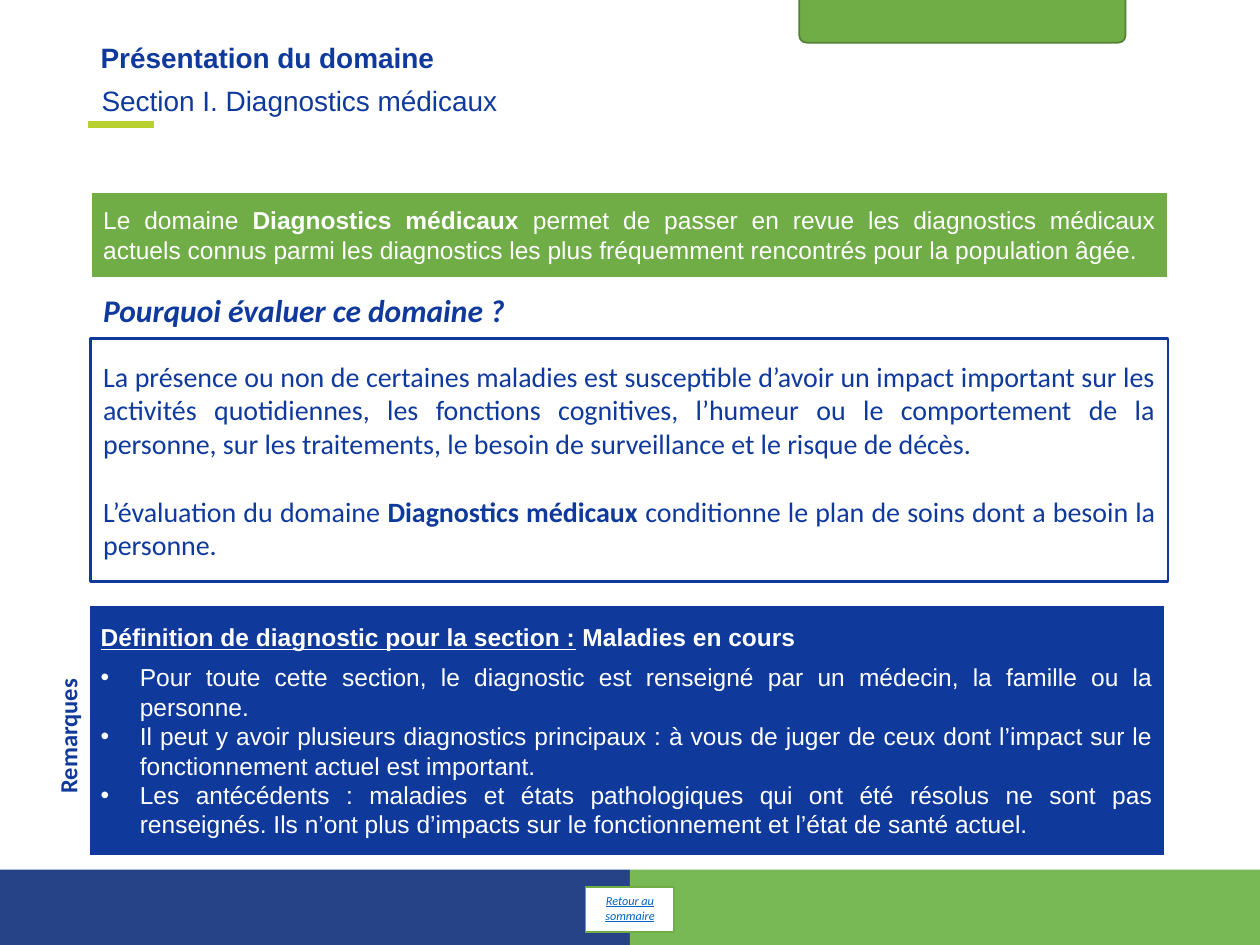
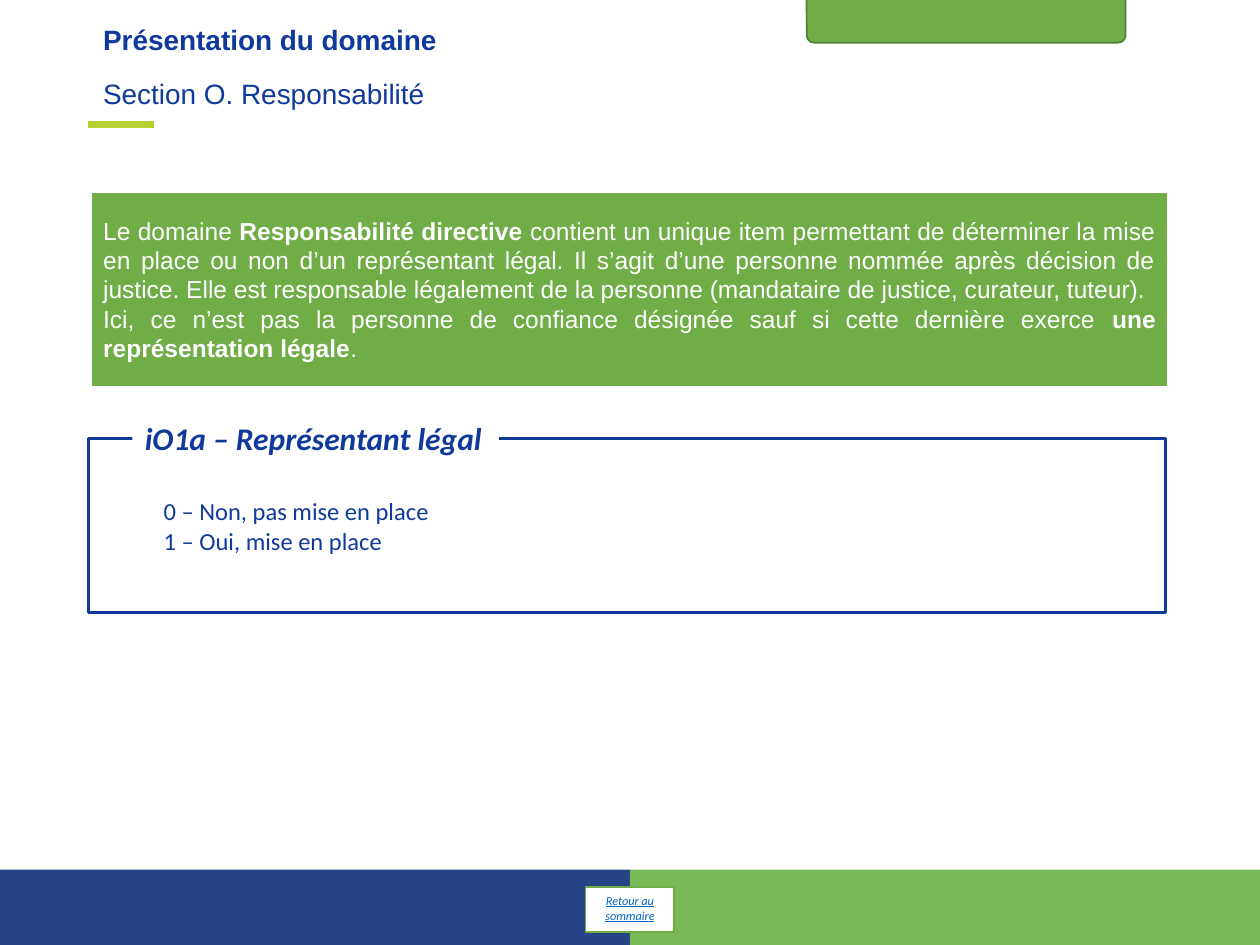
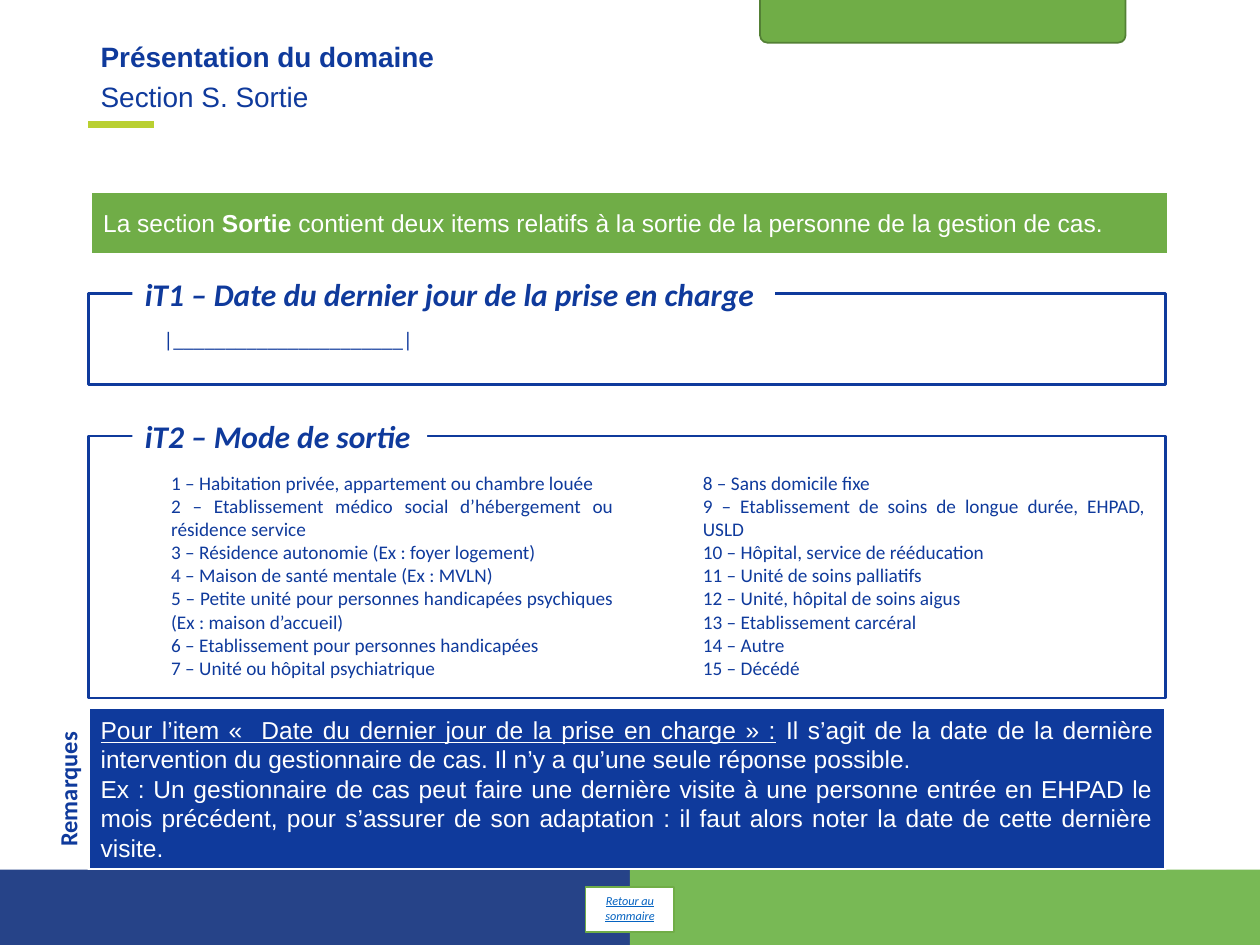
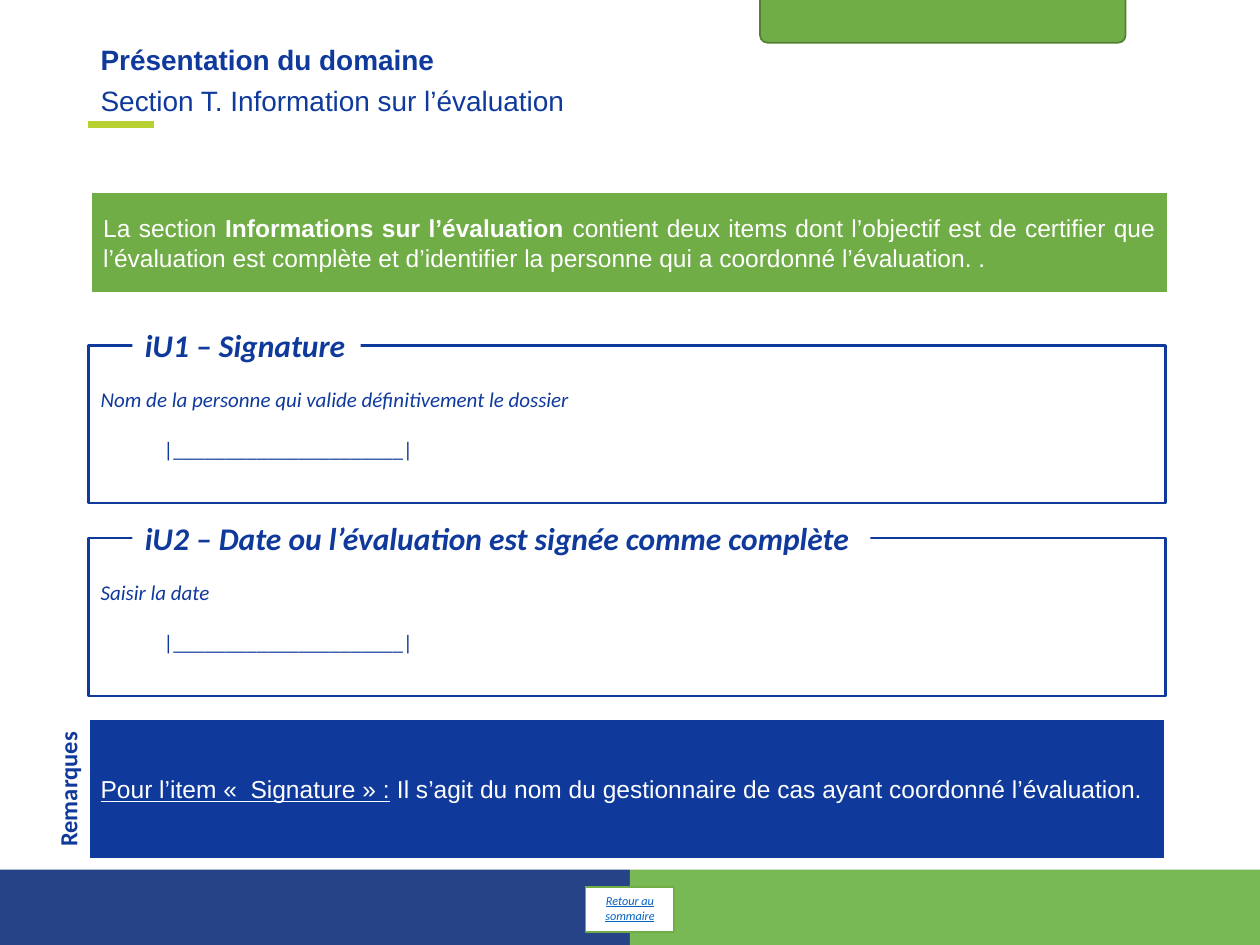
from dataclasses import dataclass

from lxml import etree
from pptx import Presentation
from pptx.dml.color import RGBColor
from pptx.enum.shapes import MSO_CONNECTOR, MSO_SHAPE
from pptx.enum.text import MSO_ANCHOR, MSO_AUTO_SIZE, PP_ALIGN
from pptx.oxml.ns import qn
from pptx.util import Cm, Pt

RECT, ROUND_TOP = MSO_SHAPE.RECTANGLE, MSO_SHAPE.ROUND_2_SAME_RECTANGLE
STRAIGHT = MSO_CONNECTOR.STRAIGHT
TOP, MIDDLE = MSO_ANCHOR.TOP, MSO_ANCHOR.MIDDLE
LEFT, CENTER, JUSTIFY = PP_ALIGN.LEFT, PP_ALIGN.CENTER, PP_ALIGN.JUSTIFY
FIT = MSO_AUTO_SIZE.SHAPE_TO_FIT_TEXT

COLORS = {
    "navy": "0F3A9C", "green": "70AD47", "dark_green": "538035",
    "band_blue": "264388", "band_green": "78B955", "lime": "B9D031",
    "link": "0563C1", "white": "FFFFFF",
}
HEAD_FONT, ITEM_FONT = "Arial", "Calibri"

# Shared layout, in centimetres
SLIDE_W, SLIDE_H = 25.4, 19.05
BAND_TOP = 17.53
MARGIN, INTRO_LEFT, BLOCK_W = 1.78, 1.83, 21.72
INTRO_TOP = 3.86
TAB_RIGHT = 22.69
LEGEND_LEFT, LEGEND_H, LEGEND_RISE = 2.67, 1.02, 0.51
INDENT, HANGING = 1.27, 0.79


@dataclass
class Para:
    """Runs are (text, style) pairs; style letters: b bold, i italic, u underline."""
    runs: list
    indent: float = 0
    bullet: bool = False
    before: float = 0
    after: float = 0
    align: PP_ALIGN = JUSTIFY
    spacing: float = 0


def plain(text, style="", **options):
    return Para([(text, style)], **options)


ANSWER_LINE = "|______________________|"

SLIDES = [
    {
        "heading": ("Présentation du domaine", MARGIN, 0.76),
        "section": ("Section I. Diagnostics médicaux", 1.8, 0.56),
        "tab_width": 6.58,
        "intro_height": 1.75,
        "intro": [Para([
            ("Le domaine ", ""), ("Diagnostics médicaux", "b"),
            (" permet de passer en revue les diagnostics médicaux actuels connus parmi les "
             "diagnostics les plus fréquemment rencontrés pour la population âgée.", "")])],
        "frames": [{
            "left": INTRO_LEFT, "top": 6.83, "height": 4.9, "size": 16,
            "legend": ("Pourquoi évaluer ce domaine ?", 8.86),
            "legend_left": INTRO_LEFT, "legend_rise": 1.09,
            "body": [
                plain("La présence ou non de certaines maladies est susceptible d’avoir un impact "
                      "important sur les activités quotidiennes, les fonctions cognitives, "
                      "l’humeur ou le comportement de la personne, sur les traitements, le besoin "
                      "de surveillance et le risque de décès."),
                Para([("L’évaluation du domaine ", ""), ("Diagnostics médicaux ", "b"),
                      ("conditionne le plan de soins dont a besoin la personne.", "")],
                     before=19.5),
            ],
        }],
        "remarks": {
            "top": 12.19, "height": 5.08, "label_top": 14.4,
            "body": [
                Para([("Définition de diagnostic pour la section :", "bu"),
                      (" Maladies en cours", "b")], after=6),
                plain("Pour toute cette section, le diagnostic est renseigné par un médecin, "
                      "la famille ou la personne.", bullet=True),
                plain("Il peut y avoir plusieurs diagnostics principaux : à vous de juger de ceux "
                      "dont l’impact sur le fonctionnement actuel est important.", bullet=True),
                plain("Les antécédents : maladies et états pathologiques qui ont été résolus ne "
                      "sont pas renseignés. Ils n’ont plus d’impacts sur le fonctionnement et "
                      "l’état de santé actuel.", bullet=True),
            ],
        },
    },
    {
        "heading": ("Présentation du domaine", INTRO_LEFT, 0.41),
        "section": ("Section O. Responsabilité", INTRO_LEFT, 0.41),
        "tab_width": 6.43,
        "intro_height": 3.94,
        "intro": [
            Para([("Le domaine ", ""), ("Responsabilité directive", "b"),
                  (" contient un unique item permettant de déterminer la mise en place ou non d’un "
                   "représentant légal. Il s’agit d’une personne nommée après décision de justice. "
                   "Elle est responsable légalement de la personne (mandataire de justice, "
                   "curateur, tuteur).", "")]),
            Para([("Ici, ce n’est pas la personne de confiance désignée sauf si cette dernière "
                   "exerce ", ""), ("une représentation légale", "b"), (".", "")]),
        ],
        "frames": [{
            "top": 8.84, "height": 3.51, "size": 14,
            "legend": ("iO1a – Représentant légal", 7.39),
            "body": [plain("0 – Non, pas mise en place", indent=INDENT),
                     plain("1 – Oui, mise en place", indent=INDENT)],
        }],
    },
    {
        "heading": ("Présentation du domaine", MARGIN, 0.74),
        "section": ("Section S. Sortie", MARGIN, 0.48),
        "tab_width": 7.37,
        "intro_height": 1.27,
        "intro": [Para([
            ("La section ", ""), ("Sortie ", "b"),
            ("contient deux items relatifs à la sortie de la personne de la gestion de cas.", "")])],
        "frames": [
            {"top": 5.92, "height": 1.83, "size": 12,
             "legend": ("iT1 – Date du dernier jour de la prise en charge", 12.95),
             "body": [plain(ANSWER_LINE, indent=INDENT)]},
            {"top": 8.79, "height": 5.28,
             "legend": ("iT2 – Mode de sortie", 5.94),
             "columns": [
                 ["1 – Habitation privée, appartement ou chambre louée",
                  "2 – Etablissement médico social d’hébergement ou résidence service",
                  "3 – Résidence autonomie (Ex : foyer logement)",
                  "4 – Maison de santé mentale (Ex : MVLN)",
                  "5 – Petite unité pour personnes handicapées psychiques "
                  "(Ex : maison d’accueil)",
                  "6 – Etablissement pour personnes handicapées",
                  "7 – Unité ou hôpital psychiatrique"],
                 ["8 – Sans domicile fixe",
                  "9 – Etablissement de soins de longue durée, EHPAD, USLD",
                  "10 – Hôpital, service de rééducation",
                  "11 – Unité de soins palliatifs",
                  "12 – Unité, hôpital de soins aigus",
                  "13 – Etablissement carcéral",
                  "14 – Autre",
                  "15 – Décédé"],
             ]},
        ],
        "remarks": {
            "top": 14.27, "height": 3.25, "label_top": 15.47,
            "body": [
                Para([("Pour l’item «  Date du dernier jour de la prise en charge » :", "u"),
                      (" Il s’agit de la date de la dernière intervention du gestionnaire de cas. "
                       "Il n’y a qu’une seule réponse possible.", "")]),
                plain("Ex : Un gestionnaire de cas peut faire une dernière visite à une personne "
                      "entrée en EHPAD le mois précédent, pour s’assurer de son adaptation : il "
                      "faut alors noter la date de cette dernière visite."),
            ],
        },
    },
    {
        "heading": ("Présentation du domaine", MARGIN, 0.81),
        "section": ("Section T. Information sur l’évaluation", MARGIN, 0.56),
        "tab_width": 7.37,
        "intro_height": 2.06,
        "intro": [Para([
            ("La section ", ""), ("Informations sur l’évaluation ", "b"),
            ("contient deux items dont l’objectif est de certifier que l’évaluation est complète "
             "et d’identifier la personne qui a coordonné l’évaluation. .", "")])],
        "frames": [
            {"top": 6.96, "height": 3.18, "size": 12,
             "legend": ("iU1 – Signature", 4.6),
             "body": [plain("Nom de la personne qui valide définitivement le dossier", "i"),
                      plain(ANSWER_LINE, indent=INDENT, before=14.6)]},
            {"top": 10.85, "height": 3.18, "size": 12,
             "legend": ("iU2 – Date ou l’évaluation est signée comme complète", 14.88),
             "body": [plain("Saisir la date", "i"),
                      plain(ANSWER_LINE, indent=INDENT, before=14.6)]},
        ],
        "remarks": {
            "top": 14.48, "height": 2.84, "label_top": 15.47,
            "body": [Para([("Pour l’item «  Signature » :", "u"),
                           (" Il s’agit du nom du gestionnaire de cas ayant coordonné "
                            "l’évaluation.", "")], align=LEFT)],
        },
    },
]


def rgb(name):
    return RGBColor.from_string(COLORS[name])


def add_box(slide, box, fill=None, line=None, width=1.5, preset=RECT):
    shape = slide.shapes.add_shape(preset, *map(Cm, box))
    shape.shadow.inherit = False
    if fill:
        shape.fill.solid()
        shape.fill.fore_color.rgb = rgb(fill)
    else:
        shape.fill.background()
    if line:
        shape.line.color.rgb = rgb(line)
        shape.line.width = Pt(width)
    else:
        shape.line.fill.background()
    return shape


def write(shape, paras, size, color, font=HEAD_FONT, anchor=MIDDLE, wrap=True, fit=False):
    frame = shape.text_frame
    frame.word_wrap = wrap
    frame.vertical_anchor = anchor
    if fit:
        frame.auto_size = FIT
    for number, para in enumerate(paras):
        paragraph = frame.paragraphs[0] if number == 0 else frame.add_paragraph()
        properties = paragraph._p.get_or_add_pPr()
        if para.bullet:
            properties.set("marL", str(Cm(HANGING)))
            properties.set("indent", str(-Cm(HANGING)))
            etree.SubElement(properties, qn("a:buFont")).set("typeface", "Arial")
            etree.SubElement(properties, qn("a:buChar")).set("char", "•")
        elif para.indent:
            properties.set("marL", str(Cm(para.indent)))
            properties.set("indent", "0")
        paragraph.alignment = para.align
        if para.before:
            paragraph.space_before = Pt(para.before)
        if para.after:
            paragraph.space_after = Pt(para.after)
        if para.spacing:
            paragraph.line_spacing = para.spacing
        for text, style in para.runs:
            run = paragraph.add_run()
            run.text = text
            run.font.name = font
            run.font.size = Pt(size)
            run.font.color.rgb = rgb(color)
            run.font.bold = "b" in style
            run.font.italic = "i" in style
            run.font.underline = "u" in style


def add_text(slide, box, paras, size, color, **options):
    shape = slide.shapes.add_textbox(*map(Cm, box))
    write(shape, paras, size, color, **options)
    return shape


def add_base(slide):
    """Footer bands, accent under the title and return button."""
    half = SLIDE_W / 2
    for column, color in enumerate(("band_blue", "band_green")):
        add_box(slide, (column * half, BAND_TOP, half, SLIDE_H - BAND_TOP), color)
    accent = slide.shapes.add_connector(STRAIGHT, Cm(MARGIN), Cm(2.51), Cm(3.1), Cm(2.51))
    accent.line.color.rgb = rgb("lime")
    accent.line.width = Pt(4.5)
    etree.SubElement(accent._element.spPr, qn("a:effectLst"))
    button = add_box(slide, (11.81, 17.88, 1.78, 0.91), "white", "green", 0.75)
    write(button, [plain("Retour au sommaire", "iu", align=CENTER)], 7, "link",
          font=ITEM_FONT, anchor=TOP, fit=True)


def add_header(slide, content):
    text, left, top = content["heading"]
    add_text(slide, (left, top, 20.52, 1.35),
             [plain(text, "b", align=LEFT, spacing=0.9)], 16, "navy", anchor=TOP)
    text, left, top = content["section"]
    section = add_text(slide, (left, top, 23.4, 3.68),
                       [plain(text, align=LEFT, spacing=0.9)], 16, "navy")
    section.text_frame.margin_bottom = Cm(0.79)
    width = content["tab_width"]
    tab = add_box(slide, (TAB_RIGHT - width, -0.03, width, 0.89),
                  "green", "dark_green", 1, ROUND_TOP)
    tab.rotation = 180


def add_frame(slide, frame):
    top = frame["top"]
    outline = add_box(slide, (frame.get("left", MARGIN), top, BLOCK_W, frame["height"]),
                      line="navy")
    if "body" in frame:
        write(outline, frame["body"], frame["size"], "navy", font=ITEM_FONT)
    text, width = frame["legend"]
    legend = add_box(slide, (frame.get("legend_left", LEGEND_LEFT),
                             top - frame.get("legend_rise", LEGEND_RISE), width, LEGEND_H),
                     "white")
    write(legend, [plain(text, "bi", align=LEFT)], 18, "navy",
          font=ITEM_FONT, anchor=TOP, wrap=False, fit=True)
    for column, answers in enumerate(frame.get("columns", [])):
        add_text(slide, (1.93 + column * 10.72, top + 0.33, 10.69, 4.95),
                 [plain(answer, indent=INDENT) for answer in answers], 11, "navy",
                 font=ITEM_FONT)


def add_remarks(slide, remarks):
    panel = add_box(slide, (MARGIN, remarks["top"], BLOCK_W, remarks["height"]),
                    "navy", "white")
    write(panel, remarks["body"], 14, "white")
    label = add_text(slide, (-0.05, remarks["label_top"], 2.84, 0.86),
                     [plain("Remarques", "b", align=LEFT)], 14, "navy",
                     font=ITEM_FONT, anchor=TOP, wrap=False, fit=True)
    label.rotation = 270


def main():
    deck = Presentation()
    deck.slide_width, deck.slide_height = Cm(SLIDE_W), Cm(SLIDE_H)
    blank = deck.slide_layouts[6]
    for content in SLIDES:
        slide = deck.slides.add_slide(blank)
        add_base(slide)
        add_header(slide, content)
        intro = add_box(slide, (INTRO_LEFT, INTRO_TOP, BLOCK_W, content["intro_height"]),
                        "green", "white")
        write(intro, content["intro"], 14, "white")
        for frame in content["frames"]:
            add_frame(slide, frame)
        if "remarks" in content:
            add_remarks(slide, content["remarks"])
    deck.save("out.pptx")


if __name__ == "__main__":
    main()
